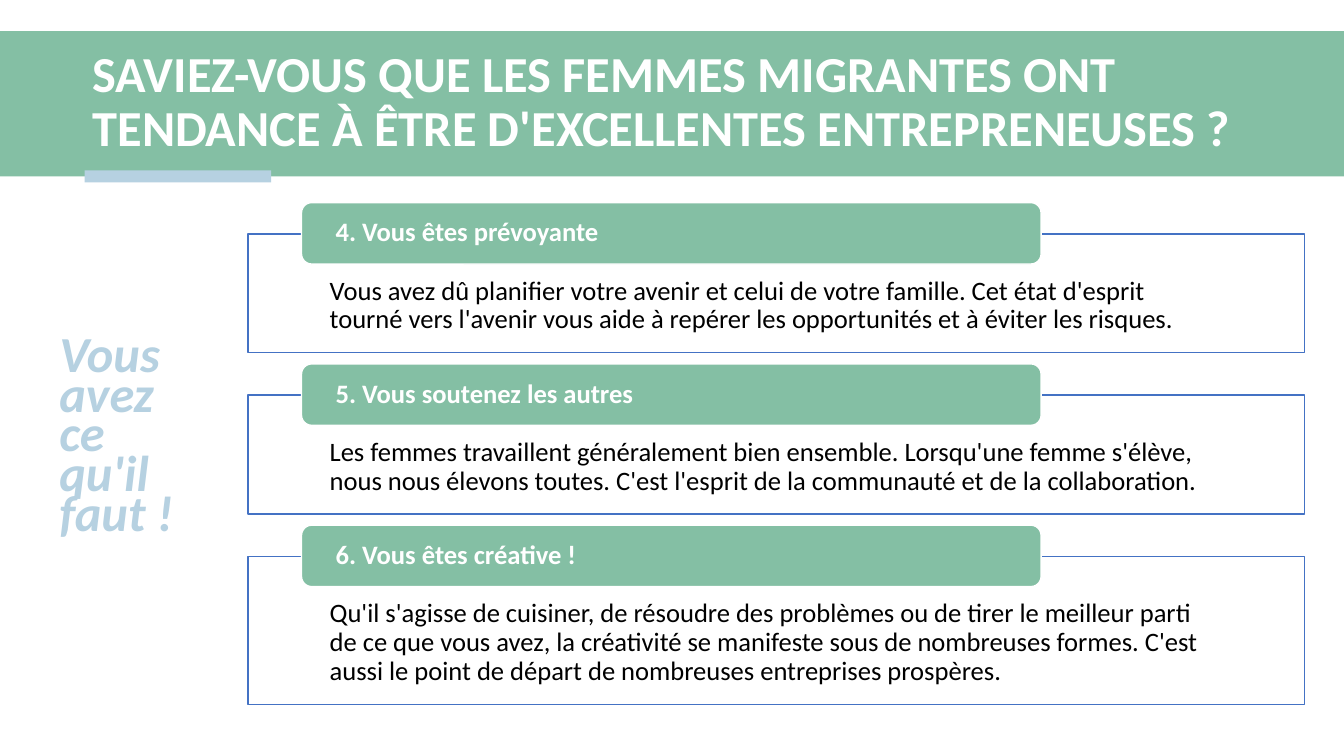
from pptx import Presentation
from pptx.dml.color import RGBColor
from pptx.enum.shapes import MSO_SHAPE as Shape
from pptx.enum.text import MSO_ANCHOR as Anchor, MSO_AUTO_SIZE as AutoSize, PP_ALIGN as Align
from pptx.util import Inches, Pt

COLORS = {"green": "84BFA4", "pale": "B6D1E1", "outline": "4472C4",
          "white": "FFFFFF", "black": "000000"}
FONT = "Calibri"
TITLE = ("SAVIEZ-VOUS QUE LES FEMMES MIGRANTES ONT TENDANCE "
         "À ÊTRE D'EXCELLENTES ENTREPRENEUSES ?")
STRENGTHS = [
    ("4. Vous êtes prévoyante",
     "Vous avez dû planifier votre avenir et celui de votre famille. Cet état d'esprit "
     "tourné vers l'avenir vous aide à repérer les opportunités et à éviter les risques.", 1.18),
    ("5. Vous soutenez les autres",
     "Les femmes travaillent généralement bien ensemble. Lorsqu'une femme s'élève, nous nous "
     "élevons toutes. C'est l'esprit de la communauté et de la collaboration.", 1.18),
    ("6. Vous êtes créative !",
     "Qu'il s'agisse de cuisiner, de résoudre des problèmes ou de tirer le meilleur parti de ce "
     "que vous avez, la créativité se manifeste sous de nombreuses formes. C'est aussi le point "
     "de départ de nombreuses entreprises prospères.", 1.47),
]
PANEL_GAP = 0.42


def color(name):
    return RGBColor.from_string(COLORS[name])


def write(shape, text, size=19, ink="black", bold=False, italic=False,
          spacing=0.9, anchor=Anchor.TOP, insets=(0.1, 0.05, 0.1, 0.05)):
    frame = shape.text_frame
    frame.word_wrap = True
    frame.auto_size = AutoSize.NONE
    frame.vertical_anchor = anchor
    (frame.margin_left, frame.margin_top,
     frame.margin_right, frame.margin_bottom) = map(Inches, insets)
    paragraph = frame.paragraphs[0]
    paragraph.alignment = Align.LEFT
    paragraph.line_spacing = spacing
    paragraph.space_before = Pt(0)
    run = paragraph.add_run()
    run.text = text
    font = run.font
    font.name, font.size, font.bold, font.italic = FONT, Pt(size), bold, italic
    font.color.rgb = color(ink)


def add_block(slide, kind, box, fill, line=None):
    shape = slide.shapes.add_shape(kind, *map(Inches, box))
    shape.shadow.inherit = False
    shape.fill.solid()
    shape.fill.fore_color.rgb = color(fill)
    if line:
        shape.line.color.rgb = color(line)
        shape.line.width = Pt(1)
    else:
        shape.line.fill.background()
    return shape


def add_header(slide, left, top, width, height):
    """Place the title on its band, with the accent bar on the lower edge."""
    title = slide.shapes.title
    title.left, title.top = Inches(left + 0.82), Inches(top + 0.1)
    title.width, title.height = Inches(11.81), Inches(1.23)
    write(title, TITLE, size=36, ink="white", bold=True, anchor=Anchor.MIDDLE)
    band = add_block(slide, Shape.RECTANGLE, (left, top, width, height), "green")
    accent = add_block(slide, Shape.RECTANGLE,
                       (left + 0.84, top + height - 0.06, 1.85, 0.12), "pale")
    for backdrop in (band, accent):
        title.element.addprevious(backdrop.element)


def add_side_message(slide, left, top, width, height):
    box = slide.shapes.add_textbox(*map(Inches, (left, top, width, height)))
    write(box, "Vous avez ce qu'il faut !", size=36, ink="pale",
          bold=True, italic=True, spacing=Pt(28.4))


def add_strength(slide, heading, body, left, top, width, height):
    """Draw an outlined panel whose heading tab straddles its top edge."""
    panel = add_block(slide, Shape.RECTANGLE, (left, top, width, height), "white", "outline")
    write(panel, body, insets=(0.81, 0.43, 0.81, 0.15))
    tab = add_block(slide, Shape.ROUNDED_RECTANGLE,
                    (left + 0.53, top - 0.31, 0.7 * width, 0.61), "green", "white")
    write(tab, heading, ink="white", bold=True, anchor=Anchor.MIDDLE,
          insets=(0.31, 0, 0.31, 0))


def add_strengths(slide, left, top, width):
    for heading, body, height in STRENGTHS:
        add_strength(slide, heading, body, left, top, width, height)
        top += height + PANEL_GAP


def main():
    presentation = Presentation()
    presentation.slide_width, presentation.slide_height = Inches(13.33), Inches(7.5)
    slide = presentation.slides.add_slide(presentation.slide_layouts.get_by_name("Title Only"))
    add_header(slide, 0, 0.31, 13.33, 1.44)
    add_side_message(slide, 0.49, 3.35, 1.62, 2.06)
    add_strengths(slide, 2.46, 2.32, 10.48)
    presentation.save("out.pptx")


if __name__ == "__main__":
    main()
